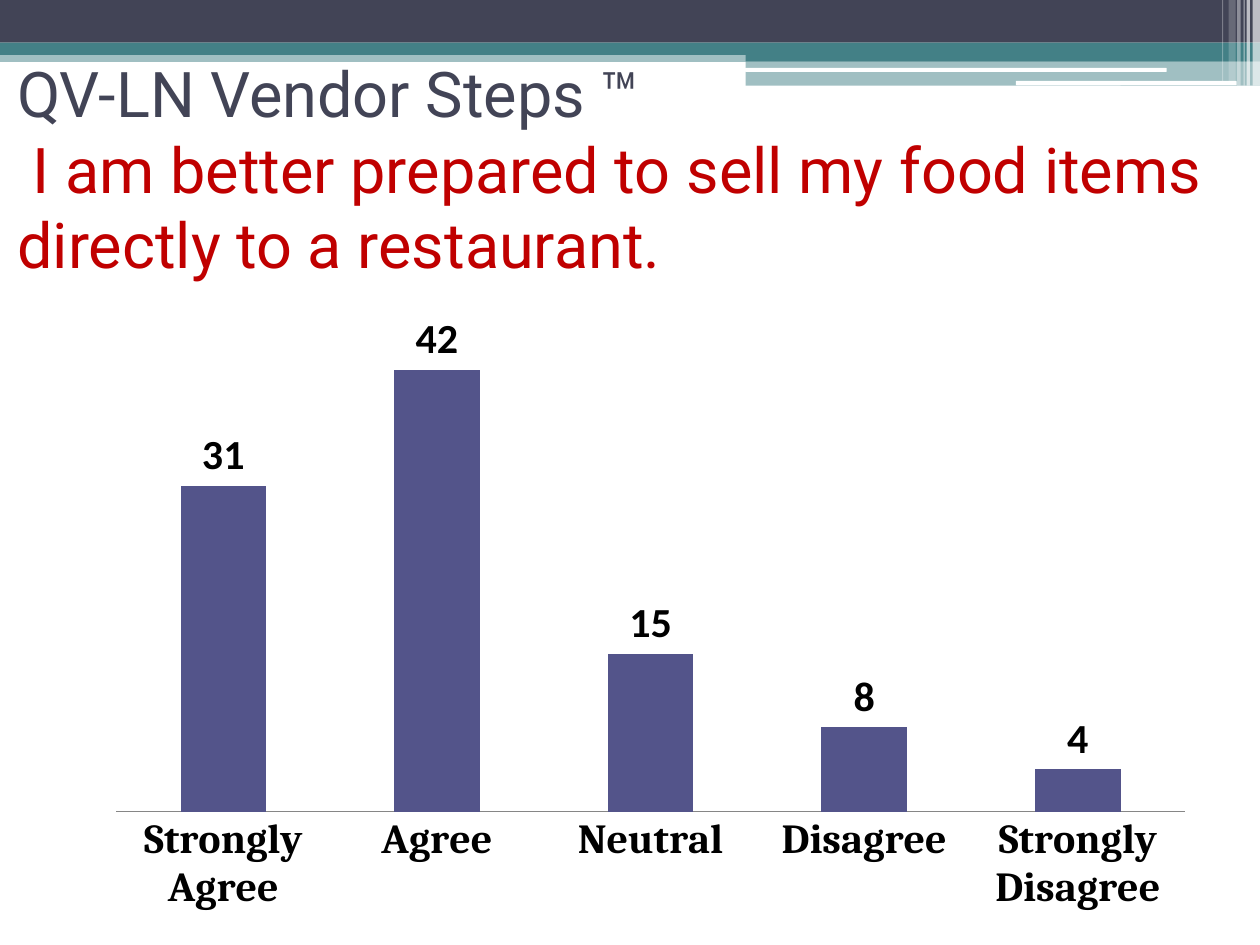
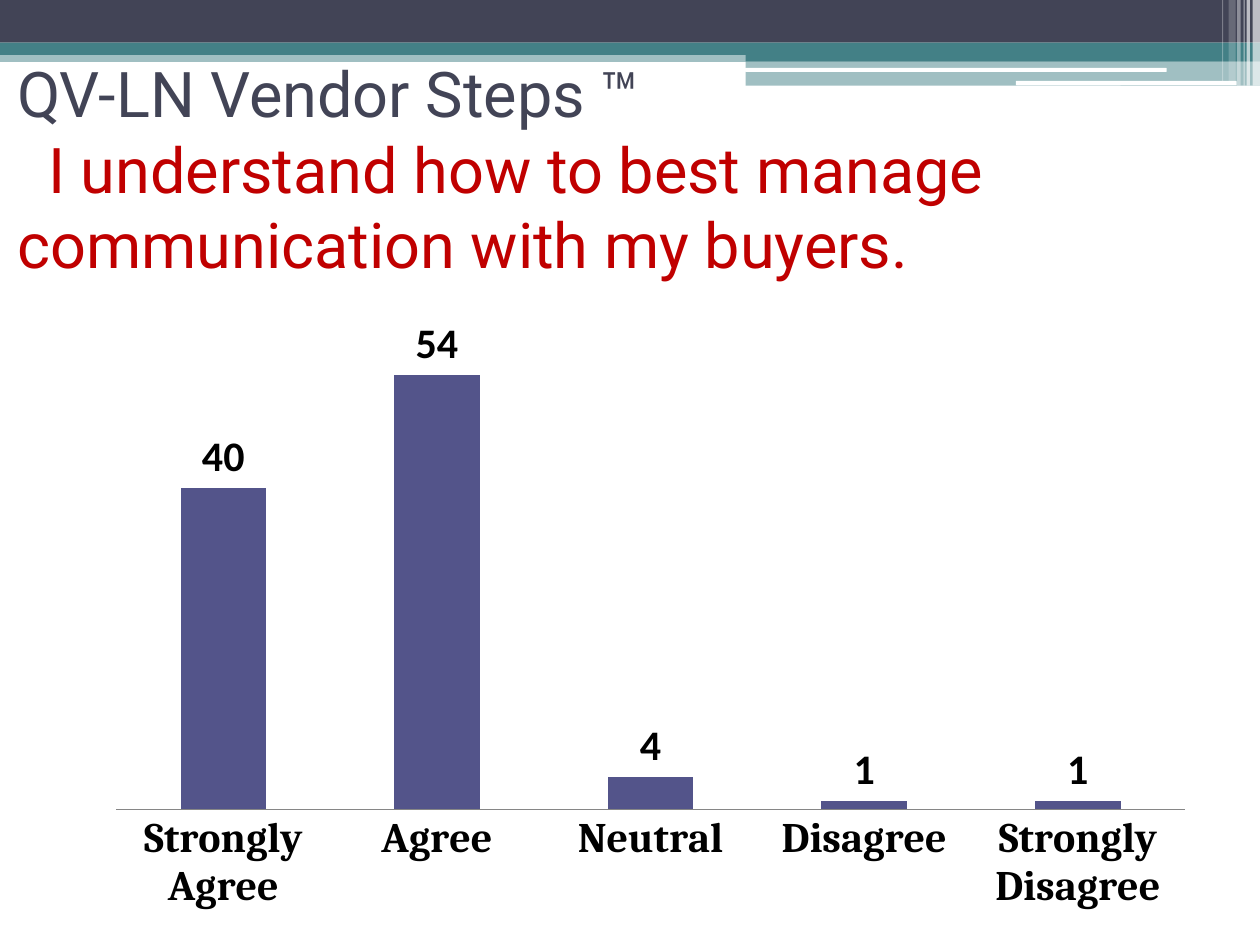
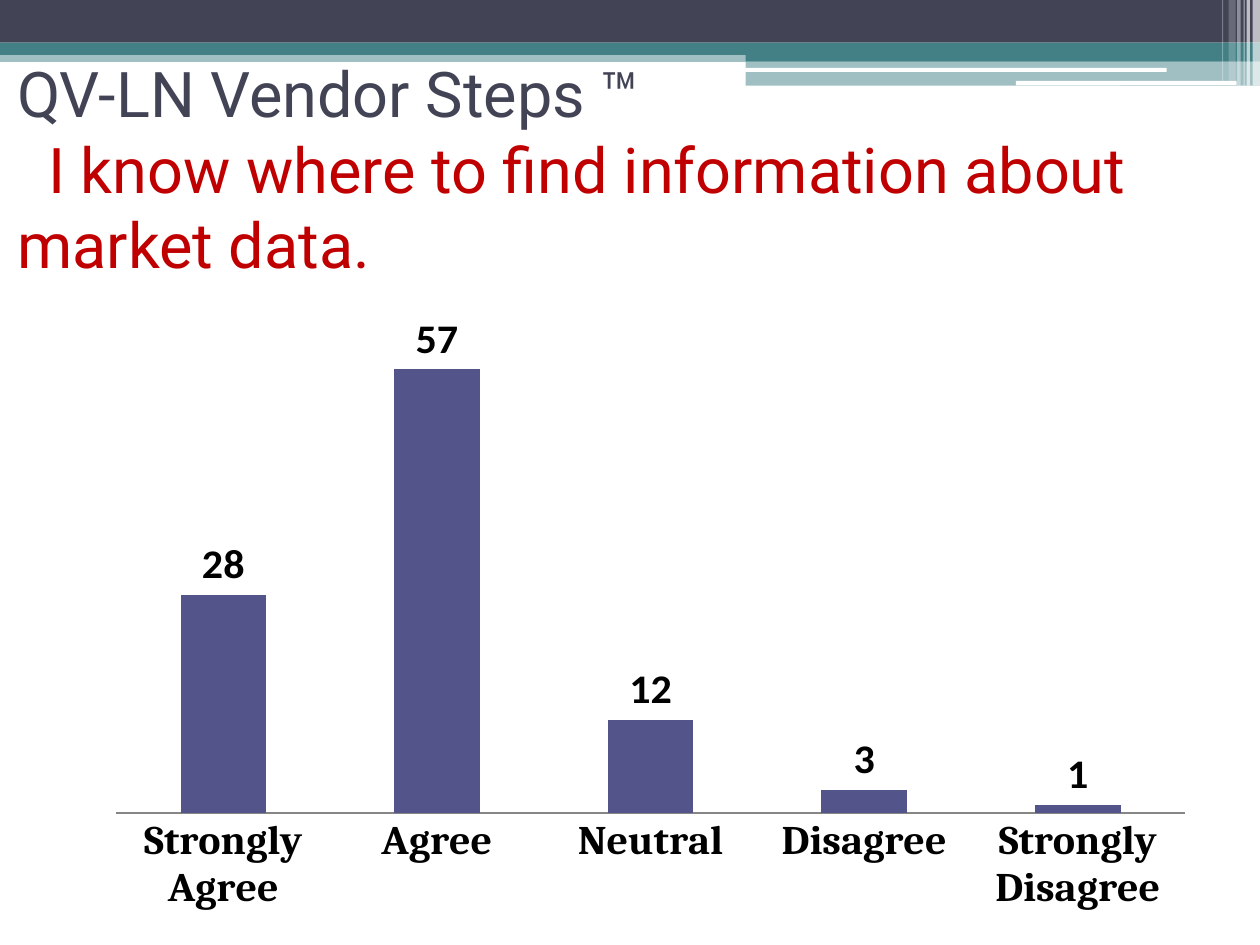
from lxml.etree import SubElement
from pptx import Presentation
from pptx.chart.data import CategoryChartData
from pptx.dml.color import RGBColor
from pptx.enum.chart import XL_CHART_TYPE, XL_LABEL_POSITION, XL_TICK_MARK
from pptx.enum.shapes import MSO_SHAPE
from pptx.enum.text import MSO_ANCHOR
from pptx.oxml.ns import qn
from pptx.util import Cm, Pt

COLOURS = {
    "slate": "424456",
    "teal": "438086",
    "white": "FFFFFF",
    "red": "C00000",
    "bar": "53548A",
    "axis": "868686",
    "black": "000000",
}
RECTANGLE, ROUNDED = MSO_SHAPE.RECTANGLE, MSO_SHAPE.ROUNDED_RECTANGLE

# Header bands, back to front: preset, left, top, width, height, colour, opacity in %
BANDS = [
    (RECTANGLE, 0, 1.02, 25.4, 0.23, "teal", 50),
    (RECTANGLE, 0, 0, 25.4, 0.86, "slate", 100),
    (RECTANGLE, 0, 0.86, 25.4, 0.25, "teal", 100),
    (RECTANGLE, 15.03, 0.99, 10.37, 0.24, "teal", 100),
    (RECTANGLE, 15.03, 1.23, 10.37, 0.5, "teal", 50),
    (ROUNDED, 15.02, 1.37, 8.5, 0.08, "white", 100),
    (ROUNDED, 20.48, 1.63, 4.45, 0.09, "white", 100),
]
# Light stripes at the right edge: left, width, height, opacity in %
STRIPES = [
    (25.25, 0.15, 1.73, 65),
    (25.13, 0.07, 1.73, 65),
    (25.07, 0.02, 1.73, 60),
    (24.94, 0.07, 1.73, 40),
    (24.77, 0.14, 1.63, 20),
    (24.64, 0.02, 1.63, 30),
]
BANDS += [(RECTANGLE, left, 0, width, height, "white", opacity)
          for left, width, height, opacity in STRIPES]

PROGRAMME = "QV-LN Vendor Steps ™"
ANSWERS = ["Strongly Agree", "Agree", "Neutral", "Disagree", "Strongly Disagree"]
# Statement, first-line indent in cm, answers in percent
SURVEY = [
    ("I am better prepared to sell my food items directly to a restaurant.",
     0.31, (31, 42, 15, 8, 4)),
    ("I understand how to best manage communication with my buyers.",
     0.62, (40, 54, 4, 1, 1)),
    ("I know where to find information about market data.",
     0.62, (28, 57, 12, 3, 1)),
]

TITLE_FONT = {"name": "Roboto", "size": Pt(36)}
CHART_FONT = {"name": "Cambria", "size": Pt(18)}
ANSWER_FONT = {"name": "Cambria", "size": Pt(24), "bold": True}
LABEL_FONT = {"name": "Calibri", "size": Pt(24), "bold": True}
LABEL_FORMAT = {
    "show_value": True,
    "number_format": "0",
    "number_format_is_linked": False,
    "position": XL_LABEL_POSITION.OUTSIDE_END,
}
ANSWER_AXIS = {
    "major_tick_mark": XL_TICK_MARK.NONE,
    "minor_tick_mark": XL_TICK_MARK.NONE,
    "has_major_gridlines": False,
}
VALUE_AXIS = {"visible": False, "has_major_gridlines": False, "minimum_scale": 0}


def apply_format(target, values):
    for name, value in values.items():
        setattr(target, name, value)


def style_font(font, values, colour):
    apply_format(font, values)
    font.color.rgb = RGBColor.from_string(COLOURS[colour])


presentation = Presentation()
presentation.slide_width, presentation.slide_height = Cm(25.4), Cm(19.05)

for statement, indent, percentages in SURVEY:
    slide = presentation.slides.add_slide(presentation.slide_layouts[6])

    # Header bands
    for preset, left, top, width, height, colour, opacity in BANDS:
        band = slide.shapes.add_shape(preset, Cm(left), Cm(top), Cm(width), Cm(height))
        band.shadow.inherit = False
        band.line.fill.background()
        band.fill.solid()
        band.fill.fore_color.rgb = RGBColor.from_string(COLOURS[colour])
        if opacity < 100:
            colour_element = band.fill._xPr.find(qn("a:solidFill"))[0]
            SubElement(colour_element, qn("a:alpha"), val=str(opacity * 1000))

    # Title: programme name, then the statement
    title = slide.shapes.add_textbox(Cm(0.1), Cm(1.9), Cm(25.2), Cm(2.97))
    frame = title.text_frame
    apply_format(frame, {"word_wrap": True, "vertical_anchor": MSO_ANCHOR.MIDDLE})
    frame.text = f"{PROGRAMME}\n{statement}"
    for paragraph, colour in zip(frame.paragraphs, ("slate", "red")):
        style_font(paragraph.runs[0].font, TITLE_FONT, colour)
    frame.paragraphs[1]._p.get_or_add_pPr().set("indent", str(Cm(indent)))

    # Column chart of the answers
    chart_data = CategoryChartData(number_format="0")
    chart_data.categories = ANSWERS
    chart_data.add_series("Series 1", percentages)
    chart = slide.shapes.add_chart(XL_CHART_TYPE.COLUMN_CLUSTERED, Cm(1.9), Cm(6.35),
                                   Cm(22.43), Cm(12.27), chart_data).chart
    apply_format(chart, {"has_legend": False, "has_title": False})
    style_font(chart.font, CHART_FONT, "black")

    plot = chart.plots[0]
    apply_format(plot, {"gap_width": 150, "overlap": -25,
                        "vary_by_categories": False, "has_data_labels": True})
    apply_format(plot.data_labels, LABEL_FORMAT)
    style_font(plot.data_labels.font, LABEL_FONT, "black")
    bar_fill = plot.series[0].format.fill
    bar_fill.solid()
    bar_fill.fore_color.rgb = RGBColor.from_string(COLOURS["bar"])

    apply_format(chart.value_axis, VALUE_AXIS)
    apply_format(chart.category_axis, ANSWER_AXIS)
    style_font(chart.category_axis.tick_labels.font, ANSWER_FONT, "black")
    axis_line = chart.category_axis.format.line
    axis_line.width = Pt(0.75)
    axis_line.color.rgb = RGBColor.from_string(COLOURS["axis"])

presentation.save("out.pptx")
